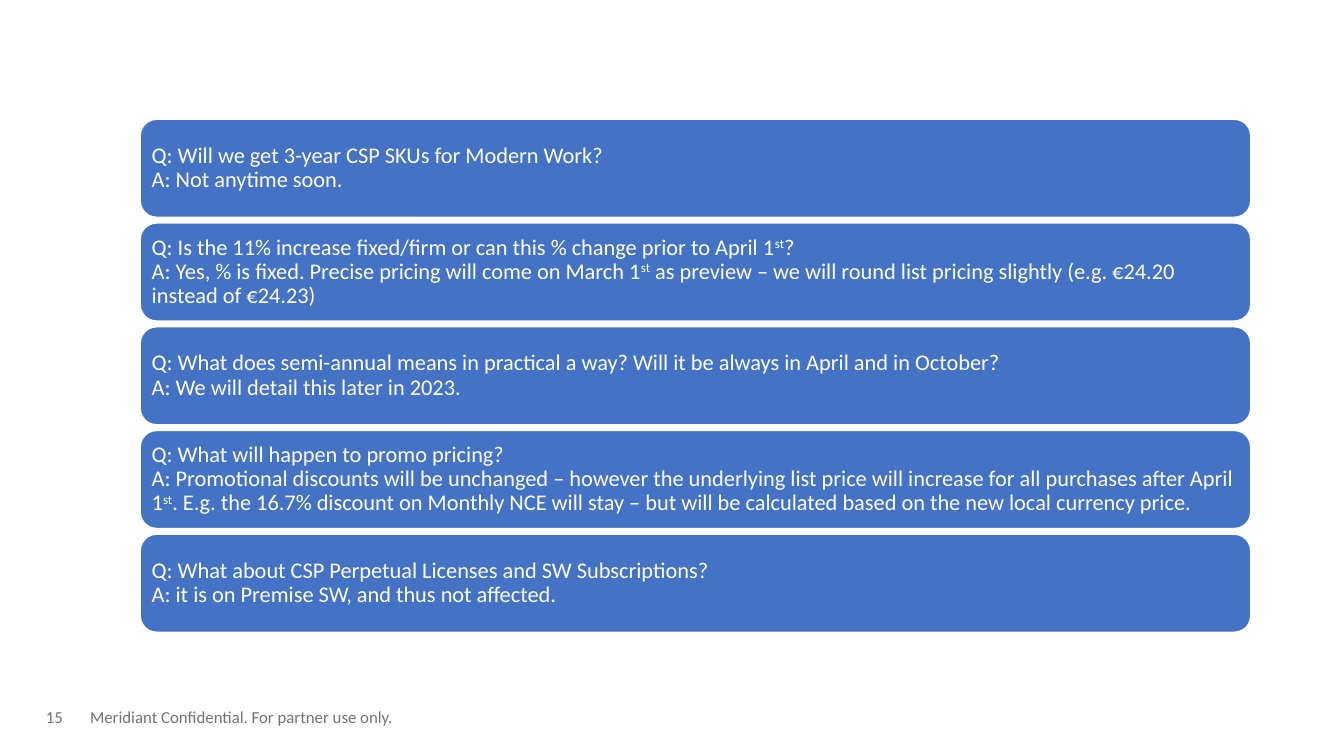
from lxml import etree
from pptx import Presentation
from pptx.dml.color import RGBColor
from pptx.enum.shapes import MSO_SHAPE as SHAPE
from pptx.enum.text import MSO_ANCHOR as ANCHOR, PP_ALIGN as ALIGN
from pptx.oxml.ns import qn
from pptx.util import Pt


def rgb(hex_color):
    return RGBColor.from_string(hex_color)


def style(r, size, color):
    r.font.name = "Calibri"
    r.font.size = Pt(size)
    r.font.color.rgb = rgb(color)


FAQ = [
    ("Q: Will we get 3-year CSP SKUs for Modern Work?",
     "A: Not anytime soon."),
    ("Q: Is the 11% increase fixed/firm or can this % change prior to April 1^st^?",
     "A: Yes, % is fixed. Precise pricing will come on March 1^st^ as preview – "
     "we will round list pricing slightly (e.g. €24.20 instead of €24.23)"),
    ("Q: What does semi-annual means in practical a way? "
     "Will it be always in April and in October?",
     "A: We will detail this later in 2023."),
    ("Q: What will happen to promo pricing?",
     "A: Promotional discounts will be unchanged – however the underlying list price "
     "will increase for all purchases after April 1^st^. E.g. the 16.7% discount on "
     "Monthly NCE will stay – but will be calculated based on the new local currency price."),
    ("Q: What about CSP Perpetual Licenses and SW Subscriptions?",
     "A: it is on Premise SW, and thus not affected."),
]
LEFT, TOP, WIDTH, HEIGHT, PITCH = 100.2, 85.2, 793.2, 70, 74.1

prs = Presentation()
prs.slide_width, prs.slide_height = Pt(960), Pt(540)
s = prs.slides.add_slide(prs.slide_layouts[6])

for row, entry in enumerate(FAQ):
    sp = s.shapes.add_shape(SHAPE.ROUNDED_RECTANGLE, Pt(LEFT), Pt(TOP + row * PITCH),
                            Pt(WIDTH), Pt(HEIGHT))
    sp.shadow.inherit = False
    sp.fill.solid()
    sp.fill.fore_color.rgb = rgb("4472C4")
    sp.line.color.rgb = rgb("FFFFFF")
    sp.line.width = Pt(1)
    tf = sp.text_frame
    tf.word_wrap = True
    tf.vertical_anchor = ANCHOR.MIDDLE
    tf.margin_left = tf.margin_right = tf.margin_top = tf.margin_bottom = Pt(4.8)
    p = tf.paragraphs[0]
    p.alignment = ALIGN.LEFT
    p.line_spacing = 0.9
    for i, line in enumerate(entry):
        if i:
            br = p._p.add_br()
            etree.SubElement(br, qn("a:rPr"), sz="1600")
        for j, part in enumerate(line.split("^")):
            r = p.add_run()
            r.text = part
            style(r, 16, "FFFFFF")
            if j % 2:
                r._r.get_or_add_rPr().set("baseline", "30000")

for text, left, width, align in [
    ("15", 24.5, 27.4, ALIGN.RIGHT),
    ("Meridiant Confidential. For partner use only.", 0, 345, ALIGN.CENTER),
]:
    sp = s.shapes.add_textbox(Pt(left), Pt(497.5), Pt(width), Pt(28.8))
    tf = sp.text_frame
    tf.word_wrap = True
    tf.vertical_anchor = ANCHOR.MIDDLE
    tf.text = text
    p = tf.paragraphs[0]
    p.alignment = align
    style(p.runs[0], 12, "737373")

prs.save("out.pptx")
